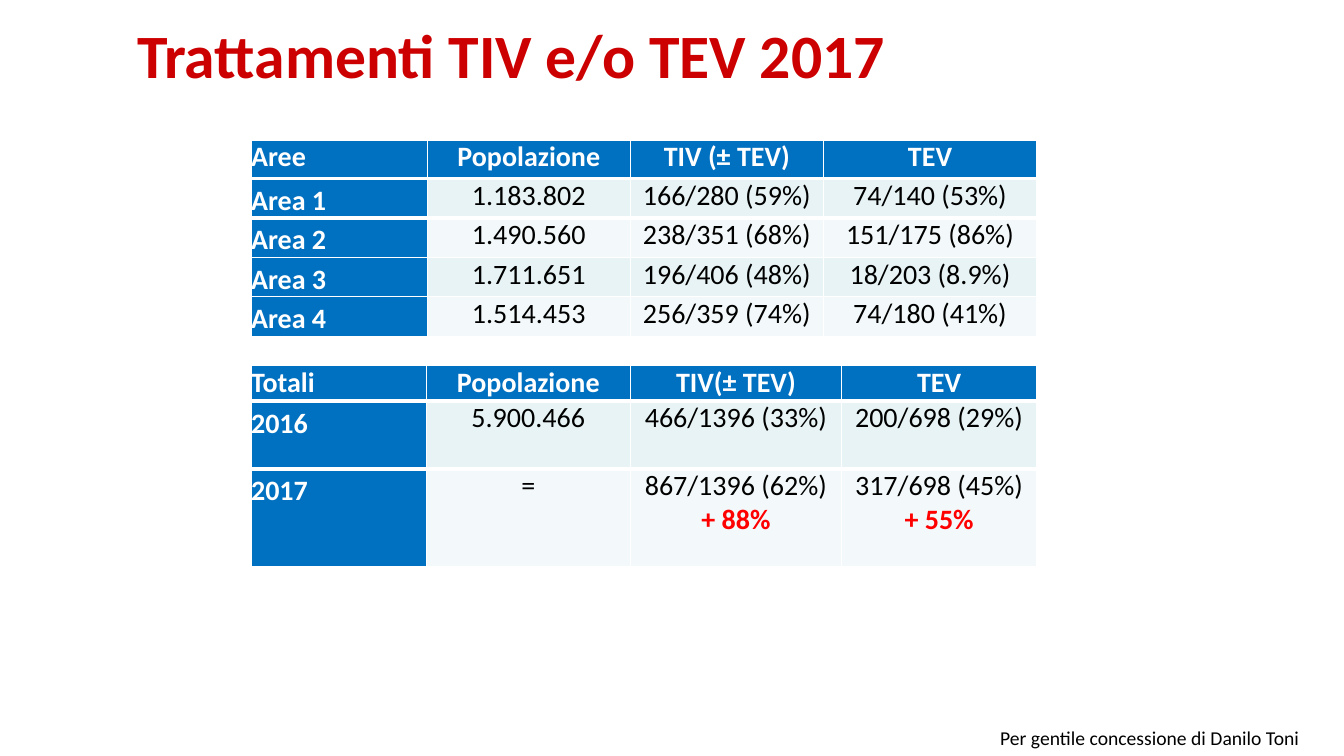
from dataclasses import dataclass

from lxml import etree
from pptx import Presentation
from pptx.dml.color import RGBColor
from pptx.enum.text import MSO_AUTO_SIZE, PP_ALIGN
from pptx.oxml.ns import qn
from pptx.util import Inches, Pt

LEFT, CENTER = PP_ALIGN.LEFT, PP_ALIGN.CENTER
GROW = MSO_AUTO_SIZE.SHAPE_TO_FIT_TEXT
WHITE = RGBColor(0xFF, 0xFF, 0xFF)
BLACK = RGBColor(0, 0, 0)
BLUE = RGBColor(0x00, 0x70, 0xC0)
CRIMSON = RGBColor(0xCC, 0x00, 0x00)
RED = RGBColor(0xFF, 0x00, 0x00)
BANDS = RGBColor(0xF3, 0xF9, 0xFA), RGBColor(0xE7, 0xF3, 0xF4)
FONT = "Calibri"


@dataclass
class Grid:
    top: float
    widths: list[float]
    heights: list[float]
    rows: list[list[str]]


@dataclass
class Label:
    text: str
    box: tuple[float, float, float, float]
    size: int
    color: RGBColor
    bold: bool
    wrap: bool


GRIDS = [
    Grid(1.39, [1.75, 2.01, 1.92, 2.11], [0.38] + [0.39] * 4, [
        ["Aree", "Popolazione", "TIV (± TEV)", "TEV"],
        ["Area 1", "1.183.802", "166/280 (59%)", "74/140 (53%)"],
        ["Area 2", "1.490.560", "238/351 (68%)", "151/175 (86%)"],
        ["Area 3", "1.711.651", "196/406 (48%)", "18/203 (8.9%)"],
        ["Area 4", "1.514.453", "256/359 (74%)", "74/180 (41%)"],
    ]),
    Grid(3.63, [1.74, 2.02, 2.1, 1.93], [0.35, 0.67, 0.97], [
        ["Totali", "Popolazione", "TIV(± TEV)", "TEV"],
        ["2016", "5.900.466", "466/1396 (33%)", "200/698 (29%)"],
        ["2017", "=", "867/1396 (62%)\n+ 88%", "317/698 (45%)\n+ 55%"],
    ]),
]

LABELS = [
    Label("Trattamenti TIV e/o TEV 2017", (1.31, 0.12, 9.33, 0.81),
          44, CRIMSON, True, True),
    Label("Per gentile concessione di Danilo Toni", (9.87, 7.15, 3.39, 0.32),
          14, BLACK, False, False),
]


def style(para, size: int, color: RGBColor, bold: bool) -> None:
    font = para.font
    font.name, font.size, font.bold = FONT, Pt(size), bold
    font.color.rgb = color


def add_edges(cell, row: int) -> None:
    props = cell._tc.get_or_add_tcPr()
    top = 3 if row in (1, 2) else 1
    base = 3 if row in (0, 1) else 1
    for side, width in (("L", 1), ("R", 1), ("T", top), ("B", base)):
        line = etree.SubElement(props, qn(f"a:ln{side}"), w=str(Pt(width)))
        fill = etree.SubElement(line, qn("a:solidFill"))
        etree.SubElement(fill, qn("a:srgbClr"), val=str(WHITE))


def fill_cell(cell, text: str, row: int, col: int) -> None:
    head = row == 0 or col == 0
    cell.margin_left = cell.margin_right = 0
    cell.margin_top = cell.margin_bottom = 0
    add_edges(cell, row)
    cell.fill.solid()
    cell.fill.fore_color.rgb = BLUE if head else BANDS[row % 2]
    cell.text = text
    for para in cell.text_frame.paragraphs:
        gain = para.text.startswith("+")
        color = WHITE if head else RED if gain else BLACK
        para.alignment = CENTER if col else LEFT
        if row and not col:
            para.line_spacing = 1.15
        style(para, 20, color, head or gain)


def add_grid(slide, grid: Grid) -> None:
    frame = slide.shapes.add_table(
        len(grid.heights), len(grid.widths), Inches(2.49), Inches(grid.top),
        Inches(sum(grid.widths)), Inches(sum(grid.heights)))
    table = frame.table
    for col, width in zip(table.columns, grid.widths):
        col.width = Inches(width)
    for row, height in zip(table.rows, grid.heights):
        row.height = Inches(height)
    for r, texts in enumerate(grid.rows):
        for c, text in enumerate(texts):
            fill_cell(table.cell(r, c), text, r, c)


def add_label(slide, label: Label) -> None:
    box = slide.shapes.add_textbox(*map(Inches, label.box))
    frame = box.text_frame
    frame.word_wrap = label.wrap
    frame.auto_size = GROW
    frame.margin_left = frame.margin_right = Inches(0.05)
    frame.margin_top = frame.margin_bottom = Inches(0.05)
    frame.text = label.text
    style(frame.paragraphs[0], label.size, label.color, label.bold)


def main() -> None:
    deck = Presentation()
    deck.slide_width, deck.slide_height = Inches(13.33), Inches(7.5)
    slide = deck.slides.add_slide(deck.slide_layouts[6])
    for grid in GRIDS:
        add_grid(slide, grid)
    for label in LABELS:
        add_label(slide, label)
    deck.save("out.pptx")


if __name__ == "__main__":
    main()
